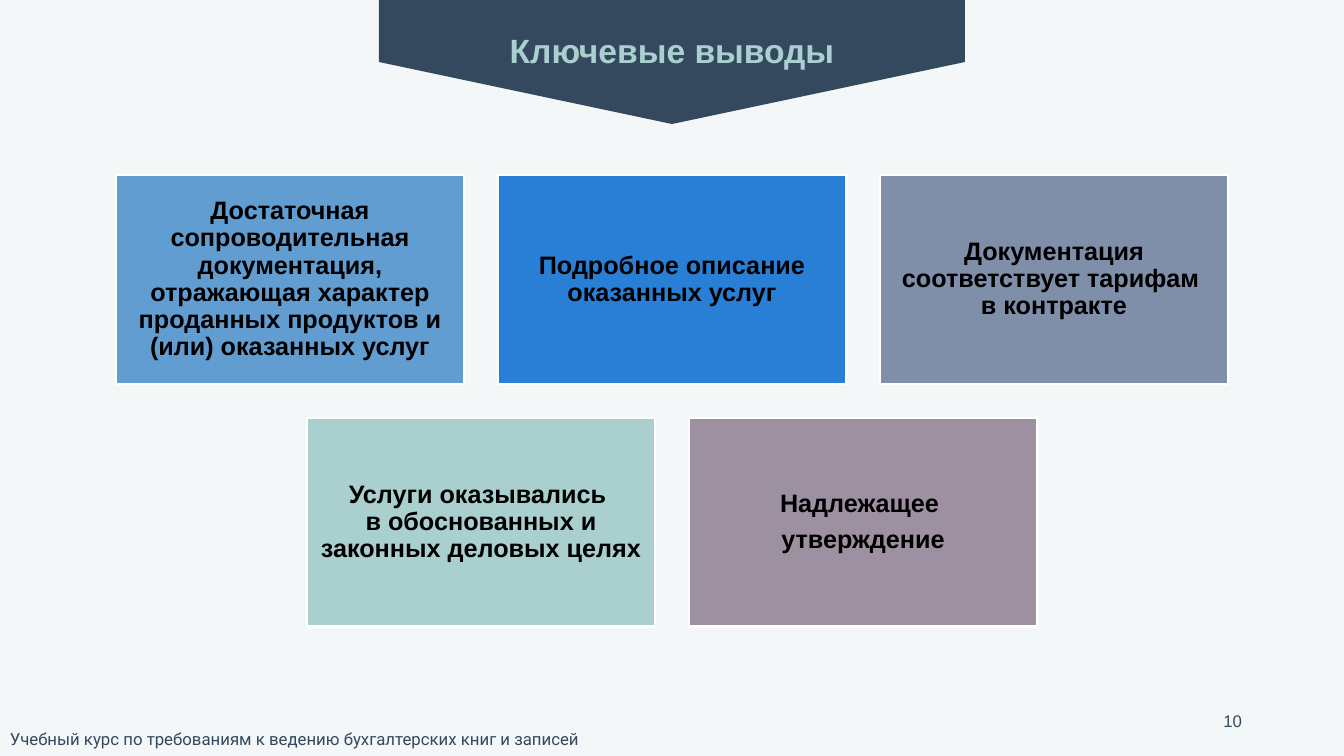
from pptx import Presentation
from pptx.dml.color import RGBColor
from pptx.enum.shapes import MSO_SHAPE
from pptx.enum.text import MSO_ANCHOR, MSO_AUTO_SIZE, PP_ALIGN
from pptx.util import Emu, Pt

RECTANGLE, PENTAGON = MSO_SHAPE.RECTANGLE, MSO_SHAPE.PENTAGON
TOP, MIDDLE = MSO_ANCHOR.TOP, MSO_ANCHOR.MIDDLE
LEFT, CENTER, RIGHT = PP_ALIGN.LEFT, PP_ALIGN.CENTER, PP_ALIGN.RIGHT
NO_AUTOFIT = MSO_AUTO_SIZE.NONE
TITLE_ONLY = 5

EMU_PER_PX = 914400 / 100.8
SLIDE_W, SLIDE_H = 1344, 756

PAPER = RGBColor(0xF4, 0xF7, 0xF7)
NAVY = RGBColor(0x34, 0x49, 0x5E)
MINT = RGBColor(0xAA, 0xCF, 0xD0)
WHITE = RGBColor(0xFF, 0xFF, 0xFF)
BLACK = RGBColor(0x00, 0x00, 0x00)
SKY = RGBColor(0x62, 0x9D, 0xD1)
BLUE = RGBColor(0x29, 0x7F, 0xD5)
SLATE = RGBColor(0x7F, 0x8F, 0xA9)
TEAL = RGBColor(0xAA, 0xCF, 0xCF)
MAUVE = RGBColor(0x9D, 0x90, 0xA0)

CARD_W, CARD_H, CARD_GAP = 348, 209, 34
CARD_INSET = 7
CONCLUSION_ROWS = [
    [
        ("Достаточная сопроводительная документация, отражающая характер "
         "проданных продуктов и (или) оказанных услуг", SKY),
        ("Подробное описание оказанных услуг", BLUE),
        ("Документация соответствует тарифам \vв контракте", SLATE),
    ],
    [
        ("Услуги оказывались \vв обоснованных и законных деловых целях", TEAL),
        ("Надлежащее \nутверждение", MAUVE),
    ],
]


def px(length):
    return Emu(round(length * EMU_PER_PX))


def box_emu(box):
    return [px(length) for length in box]


def set_all(target, values):
    for name, value in values.items():
        setattr(target, name, value)


def write(shape, text, font, align, anchor, paragraph_format=None):
    """Fill a shape with text, one paragraph per line of the string."""
    frame = shape.text_frame
    frame.text = text
    set_all(frame, {"word_wrap": True, "auto_size": NO_AUTOFIT,
                    "vertical_anchor": anchor})
    color = font["color"]
    values = {name: value for name, value in font.items() if name != "color"}
    for paragraph in frame.paragraphs:
        set_all(paragraph, {"alignment": align, **(paragraph_format or {})})
        for run in paragraph.runs:
            set_all(run.font, values)
            run.font.color.rgb = color


def add_flat_shape(slide, kind, box, fill):
    shape = slide.shapes.add_shape(kind, *box_emu(box))
    shape.shadow.inherit = False
    shape.fill.solid()
    shape.fill.fore_color.rgb = fill
    return shape


def add_heading(slide, box):
    """Place the downward-pointing banner in the box, with the title over it."""
    left, top, width, height = box
    middle_x, middle_y = left + width / 2, top + height / 2
    unrotated = (middle_x - height / 2, middle_y - width / 2, height, width)
    banner = add_flat_shape(slide, PENTAGON, unrotated, NAVY)
    banner.line.fill.background()
    banner.rotation = 90
    banner.adjustments[0] = 0.5

    title = slide.shapes.title
    title.element.addprevious(banner.element)
    title_box = box_emu((middle_x - 372, top + 25, 744, 50))
    set_all(title, dict(zip(("left", "top", "width", "height"), title_box)))
    write(title, "Ключевые выводы",
          {"name": "Arial", "size": Pt(24), "bold": True, "color": MINT},
          CENTER, TOP)


def add_card(slide, box, conclusion, fill):
    card = add_flat_shape(slide, RECTANGLE, box, fill)
    card.line.color.rgb = WHITE
    card.line.width = Pt(2)
    sides = ("margin_left", "margin_top", "margin_right", "margin_bottom")
    set_all(card.text_frame, dict.fromkeys(sides, px(CARD_INSET)))
    write(card, conclusion,
          {"name": "Arial", "size": Pt(18), "bold": True, "color": BLACK},
          CENTER, MIDDLE, {"line_spacing": 0.9, "space_after": Pt(6.3)})


def add_conclusions(slide, box):
    """Lay out the rows of cards from the top of the box, each row centred."""
    left, top, width, _ = box
    for row, conclusions in enumerate(CONCLUSION_ROWS):
        row_width = len(conclusions) * (CARD_W + CARD_GAP) - CARD_GAP
        row_left = left + (width - row_width) // 2
        card_top = top + row * (CARD_H + CARD_GAP)
        for column, (conclusion, fill) in enumerate(conclusions):
            card_left = row_left + column * (CARD_W + CARD_GAP)
            add_card(slide, (card_left, card_top, CARD_W, CARD_H),
                     conclusion, fill)


def add_footer(slide, box):
    """Put the course name at the lower left and the page number at the right."""
    left, top, width, height = box
    course = slide.shapes.add_textbox(
        *box_emu((left, top + height - 32, 590, 34)))
    write(course,
          "Учебный курс по требованиям к ведению бухгалтерских книг и записей",
          {"name": "Roboto", "size": Pt(12), "color": NAVY}, LEFT, TOP)
    page_number = slide.shapes.add_textbox(
        *box_emu((left + width - 394, top, 302, 40)))
    write(page_number, "10",
          {"name": "Arial", "size": Pt(12), "color": NAVY}, RIGHT, MIDDLE)


def main():
    deck = Presentation()
    deck.slide_width, deck.slide_height = px(SLIDE_W), px(SLIDE_H)
    slide = deck.slides.add_slide(deck.slide_layouts[TITLE_ONLY])
    slide.background.fill.solid()
    slide.background.fill.fore_color.rgb = PAPER
    add_heading(slide, (379, 0, 586, 124))
    add_conclusions(slide, (116, 175, 1112, 452))
    add_footer(slide, (0, 701, SLIDE_W, 55))
    deck.save("out.pptx")


if __name__ == "__main__":
    main()
